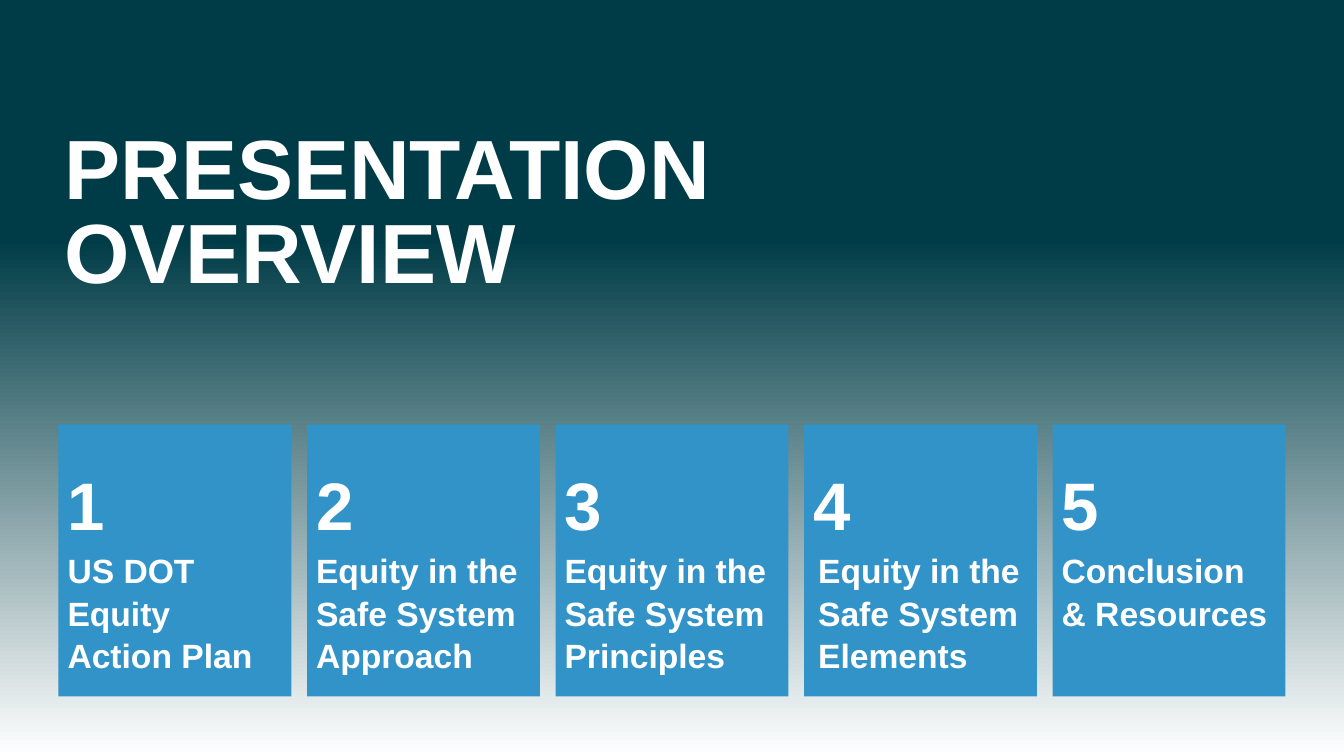
from pptx import Presentation
from pptx.dml.color import RGBColor
from pptx.enum.shapes import MSO_SHAPE
from pptx.util import Inches, Pt

TITLE = "PRESENTATION OVERVIEW"
TOPICS = [
    "US DOT Equity Action Plan",
    "Equity in the Safe System Approach",
    "Equity in the Safe System Principles",
    "Equity in the Safe System Elements",
    "Conclusion & Resources",
]
LABEL_SHIFTS = {4: 0.05}

TEAL, BLUE, WHITE = "003C47", "3293C8", "FFFFFF"
SLIDE_WIDTH, SLIDE_HEIGHT = 13.33, 7.5
BAND_HEIGHT = 2.38
FIRST_LEFT, LAST_LEFT = 0.58, 10.44
CARD_TOP, CARD_WIDTH, CARD_HEIGHT = 4.21, 2.31, 2.7
PADDING = 0.09
NUMBER_TOP, LABEL_TOP, TEXT_HEIGHT = 4.56, 5.44, 0.96


def color(value):
    return RGBColor.from_string(value)


def add_rectangle(slide, left, top, width, height, fill):
    shape = slide.shapes.add_shape(
        MSO_SHAPE.RECTANGLE, Inches(left), Inches(top), Inches(width), Inches(height))
    shape.shadow.inherit = False
    shape.fill.solid()
    shape.fill.fore_color.rgb = color(fill)
    shape.line.fill.background()
    return shape


def add_text(slide, left, top, width, height, text, size, spacing):
    box = slide.shapes.add_textbox(
        Inches(left), Inches(top), Inches(width), Inches(height))
    text_frame = box.text_frame
    text_frame.word_wrap = True
    text_frame.margin_left = text_frame.margin_right = 0
    text_frame.margin_top = text_frame.margin_bottom = 0
    text_frame.text = text
    paragraph = text_frame.paragraphs[0]
    paragraph.line_spacing = spacing
    font = paragraph.runs[0].font
    font.name = "Arial"
    font.size = Pt(size)
    font.bold = True
    font.color.rgb = color(WHITE)


def add_background(slide):
    add_rectangle(slide, 0, 0, SLIDE_WIDTH, BAND_HEIGHT, TEAL)
    fade = add_rectangle(
        slide, 0, BAND_HEIGHT, SLIDE_WIDTH, SLIDE_HEIGHT - BAND_HEIGHT, TEAL)
    fade.fill.gradient()
    fade.fill.gradient_angle = 270
    for stop, value in zip(fade.fill.gradient_stops, (TEAL, WHITE)):
        stop.color.rgb = color(value)


def add_cards(slide):
    pitch = (LAST_LEFT - FIRST_LEFT) / (len(TOPICS) - 1)
    text_width = CARD_WIDTH - 2 * PADDING
    for number, topic in enumerate(TOPICS, start=1):
        left = FIRST_LEFT + (number - 1) * pitch
        text_left = left + PADDING
        label_left = text_left + LABEL_SHIFTS.get(number, 0)
        add_rectangle(slide, left, CARD_TOP, CARD_WIDTH, CARD_HEIGHT, BLUE)
        add_text(slide, text_left, NUMBER_TOP, text_width, TEXT_HEIGHT,
                 str(number), 48, 1.05)
        add_text(slide, label_left, LABEL_TOP, text_width, TEXT_HEIGHT,
                 topic, 24, 1.05)


def main():
    presentation = Presentation()
    presentation.slide_width = Inches(SLIDE_WIDTH)
    presentation.slide_height = Inches(SLIDE_HEIGHT)
    slide = presentation.slides.add_slide(presentation.slide_layouts[6])
    add_background(slide)
    add_text(slide, 0.64, 1.31, 7.91, 0.88, TITLE, 60, Pt(60))
    add_cards(slide)
    presentation.save("out.pptx")


if __name__ == "__main__":
    main()
